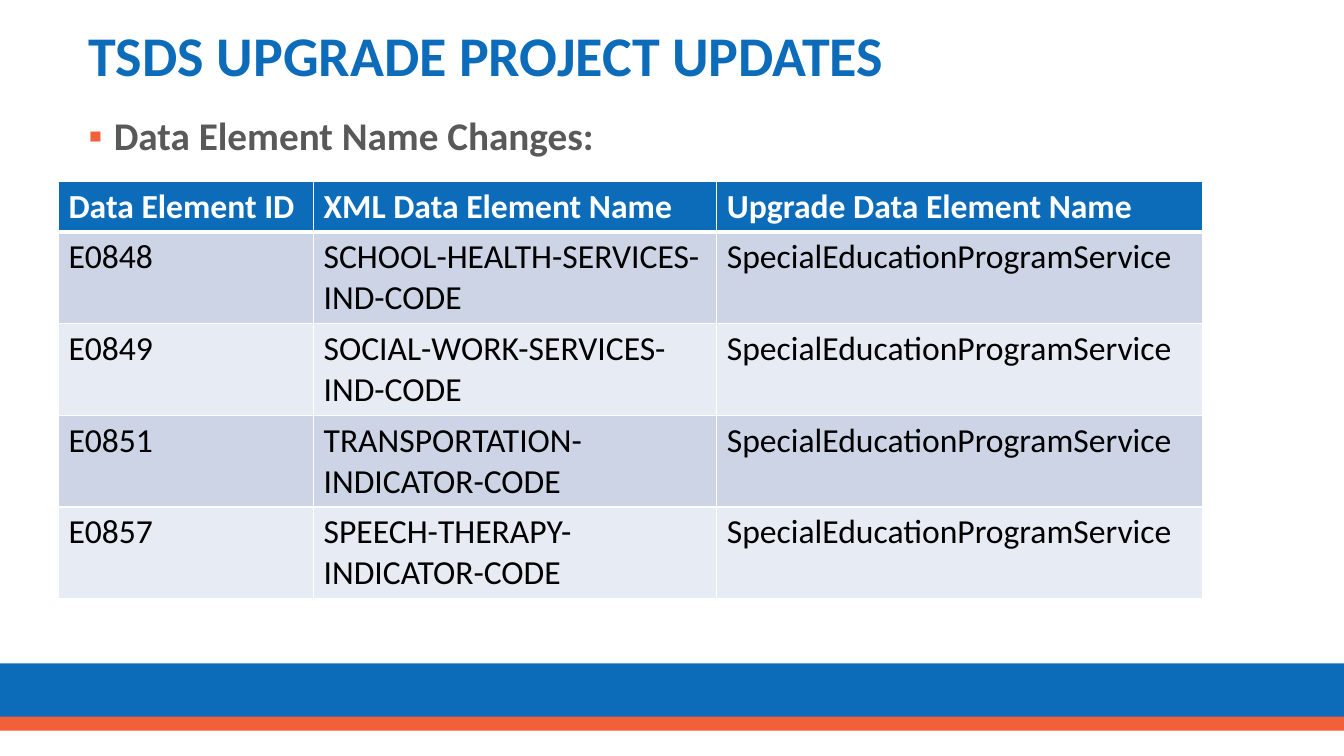
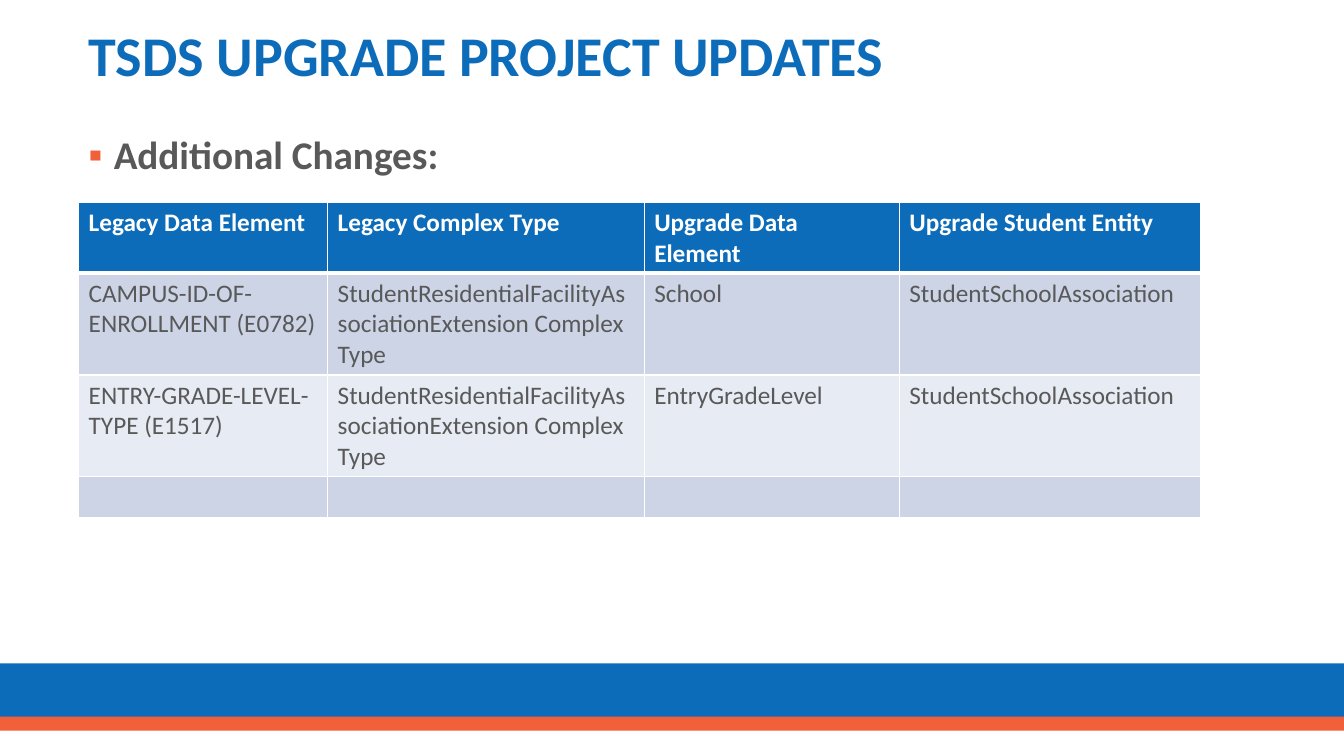
"""Build two slides of data element changes with shared title, bullet and bands."""
from lxml import etree
from pptx import Presentation
from pptx.dml.color import RGBColor
from pptx.enum.shapes import MSO_SHAPE
from pptx.enum.text import MSO_ANCHOR
from pptx.oxml.ns import qn
from pptx.util import Inches, Pt

RECT = MSO_SHAPE.RECTANGLE
TOP, MIDDLE = MSO_ANCHOR.TOP, MSO_ANCHOR.MIDDLE
FONT = "Calibri"
COLORS = {
    "blue": "0D6CB9",
    "orange": "F16038",
    "gray": "595959",
    "white": "FFFFFF",
    "black": "000000",
    "dark": "CCD4E6",
    "light": "E7EBF3",
}
TITLE = "TSDS UPGRADE PROJECT UPDATES"
LEFT = 0.78
FLOOR = 6.4
SERVICE = "SpecialEducationProgramService"
FACILITY = "StudentResidentialFacilityAssociationExtension Complex Type"
SCHOOL = "StudentSchoolAssociation"

NAMES = [
    ["Data Element ID", "XML Data Element Name", "Upgrade Data Element Name"],
    ["E0848", "SCHOOL-HEALTH-SERVICES-IND-CODE", SERVICE],
    ["E0849", "SOCIAL-WORK-SERVICES-IND-CODE", SERVICE],
    ["E0851", "TRANSPORTATION-INDICATOR-CODE", SERVICE],
    ["E0857", "SPEECH-THERAPY-INDICATOR-CODE", SERVICE],
]
EXTRAS = [
    ["Legacy Data Element", "Legacy Complex Type",
     "Upgrade Data Element", "Upgrade Student Entity"],
    ["CAMPUS-ID-OF-ENROLLMENT (E0782)", FACILITY, "School", SCHOOL],
    ["ENTRY-GRADE-LEVEL-TYPE (E1517)", FACILITY, "EntryGradeLevel", SCHOOL],
    ["", "", "", ""],
]


def rgb(name):
    """Return the named colour."""
    return RGBColor.from_string(COLORS[name])


def add_node(parent, tag, **attrs):
    """Append an XML element with attributes and return it."""
    node = etree.SubElement(parent, qn(tag))
    for key, value in attrs.items():
        node.set(key, str(value))
    return node


def add_bullet(para):
    """Give a paragraph a hanging orange square bullet."""
    props = para._p.get_or_add_pPr()
    props.set("marL", str(Inches(0.25)))
    props.set("indent", str(-Inches(0.25)))
    color = add_node(props, "a:buClr")
    add_node(color, "a:srgbClr", val=COLORS["orange"])
    add_node(props, "a:buFont", typeface=FONT)
    add_node(props, "a:buChar", char="▪")


def put_text(frame, text, size=18, color="black", bold=False,
             bullet=False, line=None):
    """Write one formatted paragraph into a text frame."""
    frame.word_wrap = True
    para = frame.paragraphs[0]
    para.text = text
    if bullet:
        add_bullet(para)
    if line:
        para.line_spacing = line
    font = para.font
    font.name, font.size, font.bold = FONT, Pt(size), bold
    font.color.rgb = rgb(color)


def add_box(slide, area, text, anchor=TOP, **style):
    """Add a text box."""
    frame = slide.shapes.add_textbox(*map(Inches, area)).text_frame
    frame.vertical_anchor = anchor
    put_text(frame, text, line=0.9, **style)


def add_band(slide, top, height, color):
    """Add a full-width footer band."""
    band = slide.shapes.add_shape(
        RECT, 0, Inches(top), Inches(13.33), Inches(height))
    band.shadow.inherit = False
    band.fill.solid()
    band.fill.fore_color.rgb = rgb(color)
    band.line.fill.background()


def add_edges(cell, row):
    """Draw white cell borders, thicker under the header row."""
    props = cell._tc.get_or_add_tcPr()
    widths = {"L": 1, "R": 1, "T": 3 if row == 1 else 1,
              "B": 3 if row == 0 else 1}
    for side, width in widths.items():
        edge = add_node(props, f"a:ln{side}", w=Pt(width))
        fill = add_node(edge, "a:solidFill")
        add_node(fill, "a:srgbClr", val=COLORS["white"])


def add_grid(slide, left, top, widths, heights, rows, size, color):
    """Add a table with a blue header and banded rows."""
    table = slide.shapes.add_table(
        len(rows), len(widths), Inches(left), Inches(top),
        Inches(sum(widths)), Inches(sum(heights))).table
    for column, width in zip(table.columns, widths):
        column.width = Inches(width)
    for r, (height, texts) in enumerate(zip(heights, rows)):
        table.rows[r].height = Inches(height)
        head = r == 0
        shade = "blue" if head else "dark" if r % 2 else "light"
        for c, text in enumerate(texts):
            cell = table.cell(r, c)
            add_edges(cell, r)
            cell.fill.solid()
            cell.fill.fore_color.rgb = rgb(shade)
            put_text(cell.text_frame, text, size=size, bold=head,
                     color="white" if head else color)


def add_page(deck, topic, top):
    """Add a slide with bands, title and topic bullet."""
    slide = deck.slides.add_slide(deck.slide_layouts[6])
    add_band(slide, 6.58, 0.58, "blue")
    add_band(slide, 7.11, 0.14, "orange")
    add_box(slide, (LEFT, 0.17, 12.16, 0.82), TITLE, anchor=MIDDLE,
            size=40, color="blue", bold=True)
    add_box(slide, (LEFT, top, 11.62, FLOOR - top), topic,
            size=28, color="gray", bold=True, bullet=True)
    return slide


def main():
    """Build and save the deck."""
    deck = Presentation()
    deck.slide_width, deck.slide_height = Inches(13.33), Inches(7.5)
    slide = add_page(deck, "Data Element Name Changes:", 1.11)
    add_grid(slide, 0.58, 1.8, [2.53, 4, 4.82], [0.5] + [0.91] * 4,
             NAMES, 24, "black")
    slide = add_page(deck, "Additional Changes:", 1.3)
    add_grid(slide, LEFT, 2.01, [2.47, 3.14, 2.53, 2.99],
             [0.7, 1.01, 1.01, 0.41], EXTRAS, 18, "gray")
    deck.save("out.pptx")


if __name__ == "__main__":
    main()
